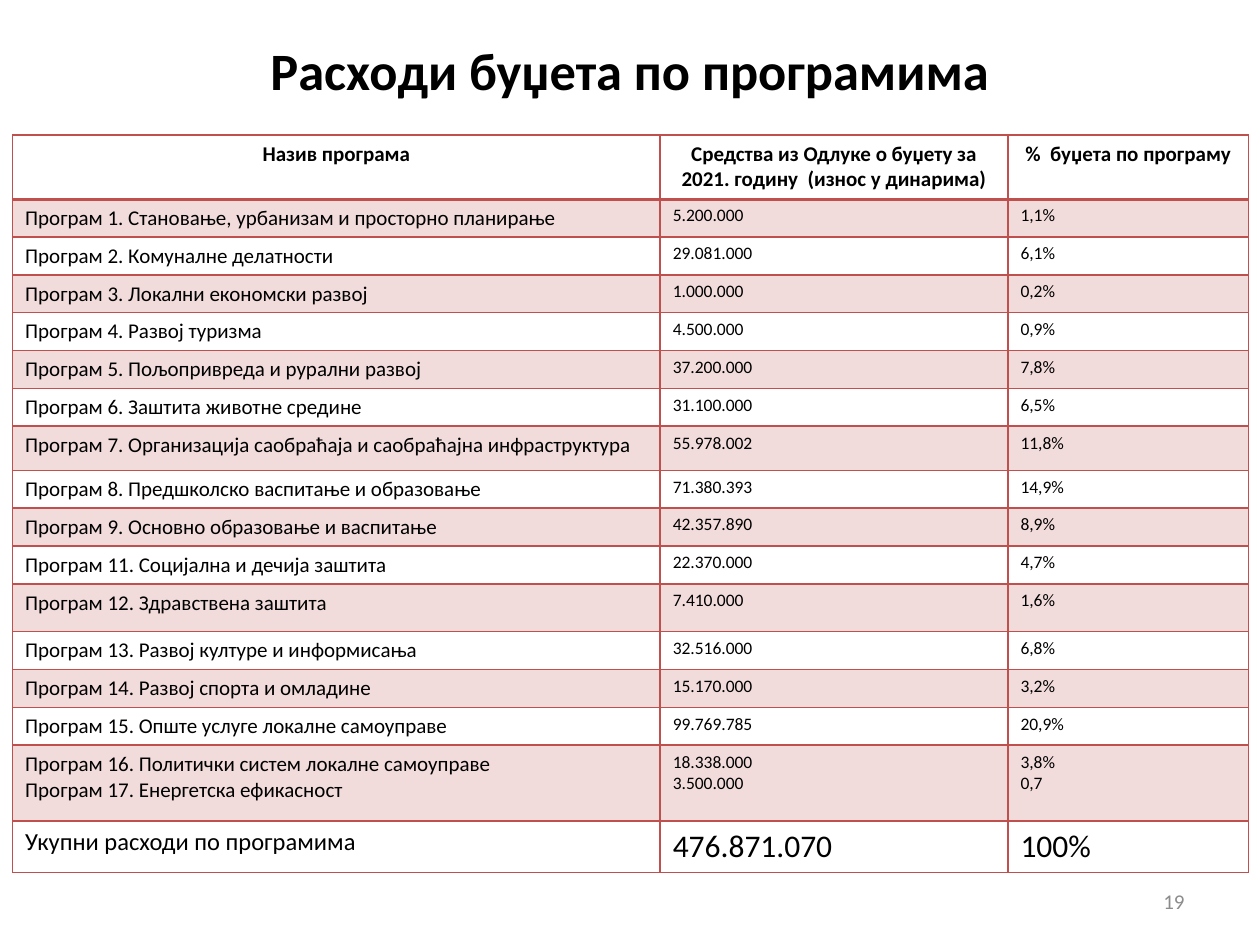
from lxml import etree
from pptx import Presentation
from pptx.dml.color import RGBColor
from pptx.enum.text import MSO_ANCHOR, PP_ALIGN
from pptx.oxml.ns import qn
from pptx.util import Inches, Pt

LEFT, CENTER, RIGHT = PP_ALIGN.LEFT, PP_ALIGN.CENTER, PP_ALIGN.RIGHT
MIDDLE = MSO_ANCHOR.MIDDLE
BLACK = RGBColor(0x00, 0x00, 0x00)
GREY = RGBColor(0x8C, 0x8C, 0x8C)
RED = RGBColor(0xC0, 0x50, 0x4D)
PINK = RGBColor(0xF2, 0xDC, 0xDB)
FONT = "Calibri"

TITLE = "Расходи буџета по програмима"
PAGE_NUMBER = "19"
HEADER = ("Назив програма",
          "Средства из Одлуке о буџету за 2021. годину  (износ у динарима)",
          "%  буџета по програму")
PROGRAMS = [
    ("Програм 1. Становање, урбанизам и просторно планирање", "5.200.000", "1,1%"),
    ("Програм 2. Комуналне делатности", "29.081.000", "6,1%"),
    ("Програм 3. Локални економски развој", "1.000.000", "0,2%"),
    ("Програм 4. Развој туризма", "4.500.000", "0,9%"),
    ("Програм 5. Пољопривреда и рурални развој", "37.200.000", "7,8%"),
    ("Програм 6. Заштита животне средине", "31.100.000", "6,5%"),
    ("Програм 7. Организација саобраћаја и саобраћајна инфраструктура",
     "55.978.002", "11,8%"),
    ("Програм 8. Предшколско васпитање и образовање", "71.380.393", "14,9%"),
    ("Програм 9. Основно образовање и васпитање", "42.357.890", "8,9%"),
    ("Програм 11. Социјална и дечија заштита", "22.370.000", "4,7%"),
    ("Програм 12. Здравствена заштита", "7.410.000", "1,6%"),
    ("Програм 13. Развој културе и информисања", "32.516.000", "6,8%"),
    ("Програм 14. Развој спорта и омладине", "15.170.000", "3,2%"),
    ("Програм 15. Опште услуге локалне самоуправе", "99.769.785", "20,9%"),
    ("Програм 16. Политички систем локалне самоуправе\nПрограм 17. Енергетска ефикасност",
     "18.338.000\n3.500.000", "3,8%\n0,7"),
]
TOTAL = ("Укупни расходи по програмима", "476.871.070", "100%")

COLUMN_WIDTHS = (5.14, 2.76, 1.91)
ROW_HEIGHT = 0.3
SPECIAL_HEIGHTS = {0: 0.51, 7: 0.35, 11: 0.38, 15: 0.6, 16: 0.41}
HEADER_SIZES, PROGRAM_SIZES, TOTAL_SIZES = (12, 12, 12), (12, 10, 10), (14, 18, 18)


def write(frame, text, size, color=BLACK, bold=False, align=LEFT):
    frame.text = text
    frame.word_wrap = True
    for para in frame.paragraphs:
        para.alignment = align
        for span in para.runs:
            span.font.color.rgb = color
            for name, value in {"name": FONT, "size": Pt(size), "bold": bold}.items():
                setattr(span.font, name, value)


def add_label(page, place, text, **style):
    box = page.shapes.add_textbox(*map(Inches, place))
    write(box.text_frame, text, **style)
    box.text_frame.vertical_anchor = MIDDLE


def set_borders(cell, widths):
    """Draw the left, right, top and bottom lines, with widths in points."""
    properties = cell._tc.get_or_add_tcPr()
    for side, width in zip("LRTB", widths):
        line = etree.SubElement(properties, qn(f"a:ln{side}"), w=str(Pt(width)))
        fill = etree.SubElement(line, qn("a:solidFill"))
        etree.SubElement(fill, qn("a:srgbClr"), val=str(RED))


def add_budget_table(page):
    rows = [HEADER, *PROGRAMS, TOTAL]
    sizes = [HEADER_SIZES, *[PROGRAM_SIZES] * len(PROGRAMS), TOTAL_SIZES]
    heights = [SPECIAL_HEIGHTS.get(i, ROW_HEIGHT) for i in range(len(rows))]
    table = page.shapes.add_table(
        len(rows), len(HEADER), Inches(0.1), Inches(1.07),
        Inches(sum(COLUMN_WIDTHS)), Inches(sum(heights))).table
    table.first_row = table.horz_banding = False
    for column, width in zip(table.columns, COLUMN_WIDTHS):
        column.width = Inches(width)
    for i, texts in enumerate(rows):
        table.rows[i].height = Inches(heights[i])
        is_header = i == 0
        for cell, text, size in zip(table.rows[i].cells, texts, sizes[i]):
            write(cell.text_frame, text, size, bold=is_header,
                  align=CENTER if is_header else LEFT)
            set_borders(cell, (1, 1, 2 if i == 1 else 1, 2 if is_header else 1))
            if i % 2:
                cell.fill.solid()
                cell.fill.fore_color.rgb = PINK
            else:
                cell.fill.background()


def main():
    deck = Presentation()
    deck.slide_width, deck.slide_height = Inches(10), Inches(7.5)
    page = deck.slides.add_slide(deck.slide_layouts[6])
    add_label(page, (0.74, 0.13, 8.52, 0.85), TITLE, size=30, bold=True, align=CENTER)
    add_label(page, (7.17, 6.95, 2.33, 0.4), PAGE_NUMBER, size=12, color=GREY, align=RIGHT)
    add_budget_table(page)
    deck.save("out.pptx")


if __name__ == "__main__":
    main()
